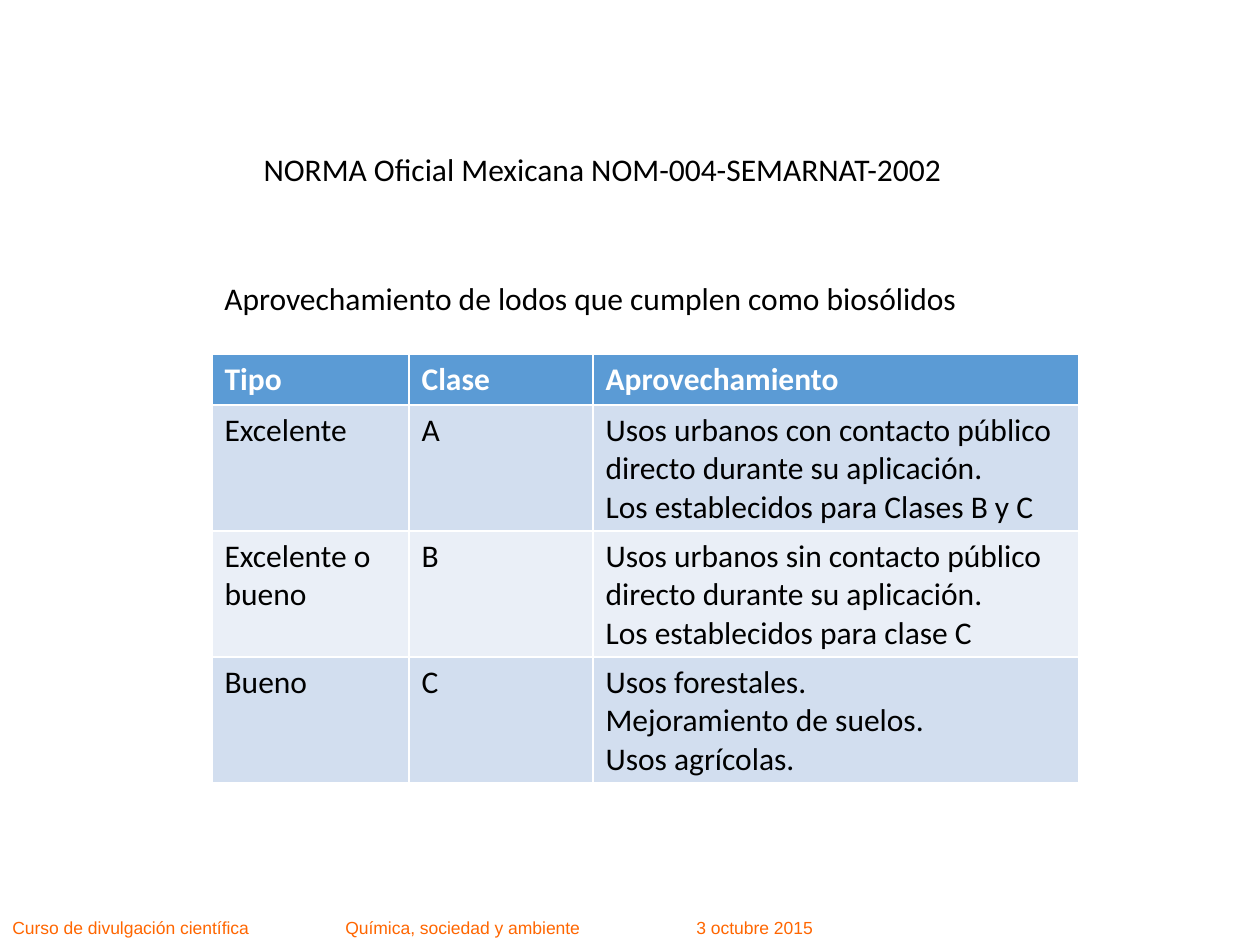
import pptx
import pptx.dml.color
import pptx.enum.text
import pptx.oxml.ns
import pptx.util
from lxml import etree

PX = 914400 / 126
THEME = {
    "font": "Calibri", "size": 18, "text": "000000",
    "footer_font": "Arial", "footer_size": 10, "footer": "FF6600",
    "header_text": "FFFFFF", "header_fill": "5B9BD5",
    "bands": ["D2DEEF", "EAEFF7"],
}


def px(n):
    return pptx.util.Emu(round(n * PX))


def style(tf, color, font=THEME["font"], size=THEME["size"], bold=False):
    for p in tf.paragraphs:
        for r in p.runs:
            r.font.name = font
            r.font.size = pptx.util.Pt(size)
            r.font.bold = bold
            r.font.color.rgb = pptx.dml.color.RGBColor.from_string(color)


prs = pptx.Presentation()
prs.slide_width, prs.slide_height = px(1260), px(945)
slide = prs.slides.add_slide(prs.slide_layouts[5])

# Footer line, its three parts set apart by tab stops
sp = slide.shapes.add_textbox(px(0), px(911), px(930), px(34))
tf = sp.text_frame
tf.word_wrap = True
p = tf.paragraphs[0]
p.text = "Curso de divulgación científica\tQuímica, sociedad y ambiente\t3 octubre 2015"
tabs = etree.SubElement(p._p.get_or_add_pPr(), pptx.oxml.ns.qn("a:tabLst"))
for stop in (333, 684):
    etree.SubElement(tabs, pptx.oxml.ns.qn("a:tab"), pos=str(px(stop)), algn="l")
style(tf, THEME["footer"], THEME["footer_font"], THEME["footer_size"])

# Title
title = slide.shapes.title
title.left, title.top, title.width, title.height = px(169), px(144), px(867), px(50)
tf = title.text_frame
tf.text = "NORMA Oficial Mexicana NOM-004-SEMARNAT-2002"
tf.auto_size = pptx.enum.text.MSO_AUTO_SIZE.NONE
tf.vertical_anchor = pptx.enum.text.MSO_ANCHOR.TOP
tf.paragraphs[0].alignment = pptx.enum.text.PP_ALIGN.CENTER
style(tf, THEME["text"])

# Table of uses; the table style draws the white borders
rows = [
    ("Tipo", "Clase", "Aprovechamiento"),
    ("Excelente", "A",
     "Usos urbanos con contacto público directo durante su aplicación.\n"
     "Los establecidos para Clases B y C"),
    ("Excelente o bueno", "B",
     "Usos urbanos sin contacto público directo durante su aplicación.\n"
     "Los establecidos para clase C"),
    ("Bueno", "C", "Usos forestales.\nMejoramiento de suelos.\nUsos agrícolas."),
]
widths = [197, 184, 486]
heights = [51, 126, 126, 126]
table = slide.shapes.add_table(len(rows), len(widths), px(212), px(354),
                               px(sum(widths)), px(sum(heights))).table
for column, width in zip(table.columns, widths):
    column.width = px(width)
for i, values in enumerate(rows):
    table.rows[i].height = px(heights[i])
    header = i == 0
    fill = THEME["header_fill"] if header else THEME["bands"][(i - 1) % 2]
    for j, value in enumerate(values):
        cell = table.cell(i, j)
        cell.text_frame.text = value
        cell.fill.solid()
        cell.fill.fore_color.rgb = pptx.dml.color.RGBColor.from_string(fill)
        style(cell.text_frame, THEME["header_text" if header else "text"], bold=header)

# Table heading
sp = slide.shapes.add_textbox(px(212), px(273), px(760), px(50))
tf = sp.text_frame
tf.word_wrap = False
tf.text = "Aprovechamiento de lodos que cumplen como biosólidos"
style(tf, THEME["text"])

prs.save("out.pptx")
